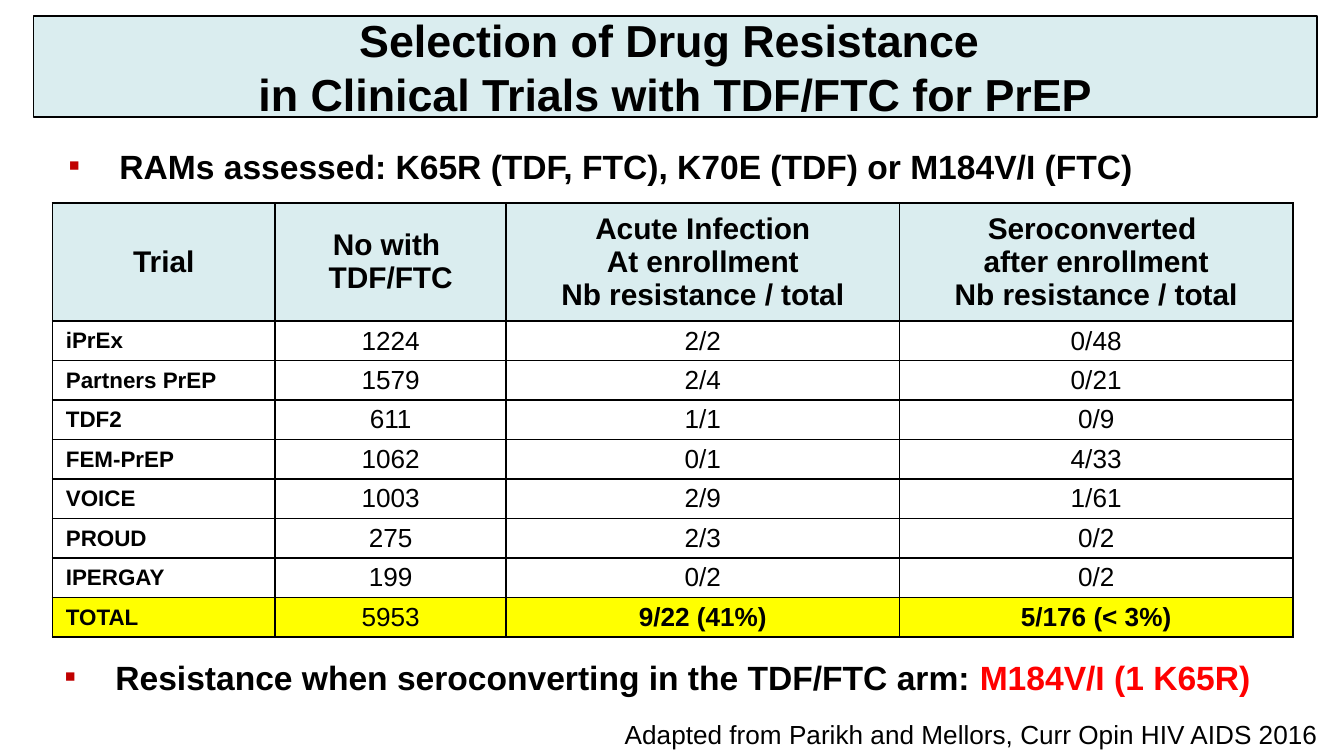
from lxml.etree import SubElement
from pptx import Presentation
from pptx.dml.color import RGBColor
from pptx.enum.shapes import MSO_SHAPE as SHAPE
from pptx.enum.text import MSO_ANCHOR as ANCHOR, MSO_AUTO_SIZE as AUTO, PP_ALIGN as ALIGN
from pptx.oxml import parse_xml
from pptx.oxml.ns import nsdecls, qn
from pptx.util import Inches, Pt

PALE, YELLOW, BLACK, RED, DARK_RED = "DAEDEF", "FFFF00", "000000", "FF0000", "C00000"
HEADERS = [
    "Trial",
    "No with \nTDF/FTC",
    "Acute Infection\nAt enrollment\nNb resistance / total",
    "Seroconverted \nafter enrollment\nNb resistance / total",
]
TRIALS = [
    ("iPrEx", "1224", "2/2", "0/48"),
    ("Partners PrEP", "1579", "2/4", "0/21"),
    ("TDF2", "611", "1/1", "0/9"),
    ("FEM-PrEP", "1062", "0/1", "4/33"),
    ("VOICE", "1003", "2/9", "1/61"),
    ("PROUD", "275", "2/3", "0/2"),
    ("IPERGAY", "199", "0/2", "0/2"),
    ("TOTAL", "5953", "9/22 (41%)", "5/176 (< 3%)"),
]
COLUMN_WIDTHS = [1.66, 1.72, 2.93, 2.93]


def rgb(color):
    """Turn a hex string into a colour."""
    return RGBColor.from_string(color)


def style_run(r, size, bold=False, color=BLACK):
    """Set the font of one run."""
    r.font.name = "Arial"
    r.font.size = Pt(size)
    r.font.bold = bold
    r.font.color.rgb = rgb(color)


def style_text(tf, size, bold=False, align=None):
    """Set the font and alignment of a whole text frame."""
    for p in tf.paragraphs:
        p.alignment = align
        for r in p.runs:
            style_run(r, size, bold)


def add_title(s, text, left, top, width, height):
    """Add the framed title bar."""
    sp = s.shapes.add_shape(SHAPE.RECTANGLE, *map(Inches, (left, top, width, height)))
    sp.shadow.inherit = False
    sp.fill.solid()
    sp.fill.fore_color.rgb = rgb(PALE)
    sp.line.color.rgb = rgb(BLACK)
    sp.line.width = Pt(0.75)
    tf = sp.text_frame
    tf.word_wrap = True
    tf.vertical_anchor = ANCHOR.MIDDLE
    tf.text = text
    style_text(tf, 24, True, ALIGN.CENTER)


def add_text(s, left, top, width, height, wrap=True):
    """Add a text box and return its text frame."""
    tf = s.shapes.add_textbox(*map(Inches, (left, top, width, height))).text_frame
    tf.word_wrap = wrap
    tf.auto_size = AUTO.SHAPE_TO_FIT_TEXT
    return tf


def add_bullet(s, parts, left, top, width, height):
    """Add a bulleted statement made of (text, colour) parts."""
    p = add_text(s, left, top, width, height).paragraphs[0]
    p.line_spacing = 0.7
    p.space_before = Pt(3.6)
    p.space_after = Pt(7)
    for text, color in parts:
        r = p.add_run()
        r.text = text
        style_run(r, 18, True, color)
    pPr = p._p.get_or_add_pPr()
    indent = Inches(0.38)
    pPr.set("marL", str(indent))
    pPr.set("indent", str(-indent))
    SubElement(SubElement(pPr, qn("a:buClr")), qn("a:srgbClr")).set("val", DARK_RED)
    SubElement(pPr, qn("a:buFont")).set("typeface", "Arial")
    SubElement(pPr, qn("a:buChar")).set("char", "▪")


def add_borders(cell):
    """Draw a thin black line on each side of a cell."""
    tcPr = cell._tc.get_or_add_tcPr()
    for i, side in enumerate("LRTB"):
        tcPr.insert(i, parse_xml(
            f'<a:ln{side} {nsdecls("a")} w="{Pt(1)}"><a:solidFill>'
            f'<a:srgbClr val="{BLACK}"/></a:solidFill></a:ln{side}>'))


def fill_cell(cell, text, size, bold, align, fill):
    """Write and style one table cell."""
    cell.margin_left = cell.margin_right = Inches(0.1)
    cell.margin_top = cell.margin_bottom = Inches(0.03)
    cell.vertical_anchor = ANCHOR.MIDDLE
    cell.text = text
    style_text(cell.text_frame, size, bold, align)
    if fill:
        cell.fill.solid()
        cell.fill.fore_color.rgb = rgb(fill)
    else:
        cell.fill.background()
    add_borders(cell)


def add_trial_table(s, left, top, width, height, header_height=0.88):
    """Add the trial table with a tall header and equal body rows."""
    rows = [HEADERS, *TRIALS]
    table = s.shapes.add_table(len(rows), len(HEADERS),
                               *map(Inches, (left, top, width, height))).table
    table.horz_banding = False
    for column, share in zip(table.columns, COLUMN_WIDTHS):
        column.width = Inches(width * share / sum(COLUMN_WIDTHS))
    body_height = (height - header_height) / len(TRIALS)
    for i, values in enumerate(rows):
        header, total = i == 0, values[0] == "TOTAL"
        table.rows[i].height = Inches(header_height if header else body_height)
        fill = PALE if header else YELLOW if total else None
        for j, text in enumerate(values):
            name = j == 0 and not header
            size = 16 if header else 12 if name else 14
            bold = header or name or (total and j > 1)
            align = ALIGN.LEFT if name else ALIGN.CENTER
            fill_cell(table.cell(i, j), text, size, bold, align, fill)


def add_credit(s, text, left, top, width, height):
    """Add the reference line at the foot of the slide."""
    tf = add_text(s, left, top, width, height, wrap=False)
    tf.text = text
    style_text(tf, 14)


def main():
    """Build the slide and save it."""
    prs = Presentation()
    prs.slide_width = Inches(10)
    prs.slide_height = prs.slide_width * 9 // 16
    s = prs.slides.add_slide(prs.slide_layouts[6])
    add_trial_table(s, 0.39, 1.51, 9.23, 3.23)
    add_title(s, "Selection of Drug Resistance \vin Clinical Trials with TDF/FTC for PrEP",
              0.25, 0.12, 9.55, 0.75)
    add_bullet(s, [("RAMs assessed: K65R (TDF, FTC), K70E (TDF) or M184V/I (FTC)", BLACK)],
               0.41, 1.12, 9.59, 0.31)
    add_credit(s, "Adapted from Parikh and Mellors, Curr Opin HIV AIDS 2016",
               4.55, 5.3, 5.45, 0.34)
    add_bullet(s, [("Resistance when seroconverting in the TDF/FTC arm: ", BLACK),
                   ("M184V/I (1 K65R)", RED)], 0.38, 4.92, 9.59, 0.34)
    prs.save("out.pptx")


if __name__ == "__main__":
    main()
